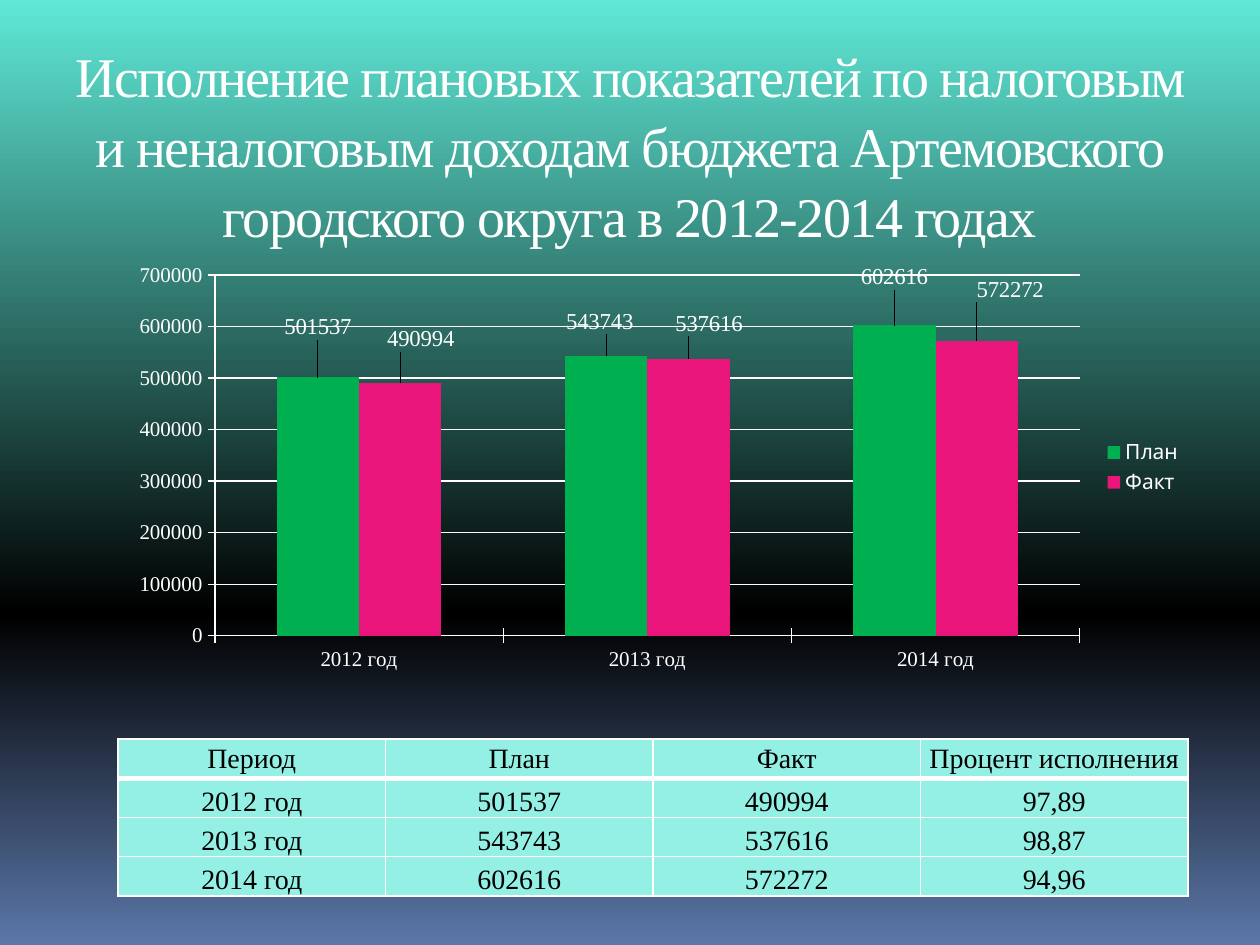
from typing import NamedTuple

from lxml.etree import SubElement
from pptx import Presentation
from pptx.chart.data import CategoryChartData
from pptx.dml.color import RGBColor
from pptx.enum.chart import XL_CHART_TYPE, XL_LABEL_POSITION, XL_LEGEND_POSITION, XL_TICK_MARK
from pptx.enum.text import MSO_ANCHOR, PP_ALIGN
from pptx.oxml import parse_xml
from pptx.oxml.ns import nsdecls, qn
from pptx.util import Emu, Pt

SERIF = "Times New Roman"
SANS = "Cabin"
WHITE = RGBColor(0xFF, 0xFF, 0xFF)
BLACK = RGBColor(0x00, 0x00, 0x00)
GREEN = RGBColor(0x00, 0xB0, 0x50)
PINK = RGBColor(0xEA, 0x15, 0x7A)
CELL = RGBColor(0x94, 0xF0, 0xE4)
TURQUOISE = RGBColor(0x5F, 0xE8, 0xD6)
STEEL = RGBColor(0x5B, 0x77, 0xA8)


def px(n: int) -> Emu:
    return Emu(round(n * 914400 / 126))


class Box(NamedTuple):
    x: int
    y: int
    w: int
    h: int

    def emu(self) -> list[Emu]:
        return [px(n) for n in self]


class Series(NamedTuple):
    name: str
    values: list[int]
    color: RGBColor
    label_shifts: list[tuple[int, int]]  # px from the place above the column


TITLE = ("Исполнение плановых показателей по налоговым и неналоговым доходам "
         "бюджета Артемовского городского округа в 2012-2014 годах")
TITLE_BOX = Box(63, 29, 1134, 168)
CHART_BOX = Box(118, 256, 1077, 423)
PLOT_BOX = Box(215, 275, 865, 361)
TABLE_BOX = Box(118, 739, 1070, 157)
YEARS = ["2012 год", "2013 год", "2014 год"]
PERCENTS = ["97,89", "98,87", "94,96"]
SERIES = [
    Series("План", [501537, 543743, 602616], GREEN, [(0, -32), (-7, -16), (0, -30)]),
    Series("Факт", [490994, 537616, 572272], PINK, [(21, -26), (20, -17), (33, -33)]),
]


def style_font(font, size: int, color: RGBColor, name: str = SERIF) -> None:
    font.size = Pt(size)
    font.name = name
    font.color.rgb = color


def paint_background(s) -> None:
    fill = s.background.fill
    fill.gradient()
    fill.gradient_angle = 270
    stops = s.element.find(".//" + qn("a:gsLst"))
    for stop in list(stops):
        stops.remove(stop)
    for percent, color in [(0, TURQUOISE), (65, BLACK), (100, STEEL)]:
        stop = SubElement(stops, qn("a:gs"), pos=str(percent * 1000))
        SubElement(stop, qn("a:srgbClr"), val=str(color))


def add_title(s) -> None:
    tf = s.shapes.add_textbox(*TITLE_BOX.emu()).text_frame
    tf.word_wrap = True
    tf.margin_left = tf.margin_right = tf.margin_bottom = 0
    tf.margin_top = px(10)
    tf.text = TITLE
    p = tf.paragraphs[0]
    p.alignment = PP_ALIGN.CENTER
    p.line_spacing = 1.04
    r = p.runs[0]
    style_font(r.font, 32, WHITE)
    r.font._element.set("spc", "-100")


def manual_layout(x: float, y: float, size: str = "", modes: str = ""):
    return parse_xml(
        f'<c:layout {nsdecls("c")}><c:manualLayout>{modes}'
        f'<c:x val="{x:.3f}"/><c:y val="{y:.3f}"/>{size}</c:manualLayout></c:layout>')


def add_column_chart(s) -> None:
    data = CategoryChartData()
    data.categories = YEARS
    for series in SERIES:
        data.add_series(series.name, series.values)
    chart = s.shapes.add_chart(XL_CHART_TYPE.COLUMN_CLUSTERED, *CHART_BOX.emu(), data).chart
    chart.has_title = False
    style_font(chart.font, 10, WHITE, SANS)

    # Legend
    chart.has_legend = True
    chart.legend.position = XL_LEGEND_POSITION.RIGHT
    chart.legend.include_in_layout = False
    style_font(chart.legend.font, 12, WHITE, SANS)

    # Axes
    for axis in (chart.category_axis, chart.value_axis):
        style_font(axis.tick_labels.font, 12, WHITE)
        axis.format.line.color.rgb = WHITE
        axis.format.line.width = Pt(0.75)
        axis.major_tick_mark = XL_TICK_MARK.CROSS
    value_axis = chart.value_axis
    value_axis.minimum_scale, value_axis.maximum_scale = 0, 700000
    value_axis.major_unit = 100000
    grid = value_axis.major_gridlines.format.line
    grid.color.rgb = WHITE
    grid.width = Pt(0.75)

    # Columns and their labels
    plot = chart.plots[0]
    plot.gap_width = 150
    plot.overlap = 0
    plot.vary_by_categories = False
    for series, columns in zip(SERIES, plot.series):
        columns.format.fill.solid()
        columns.format.fill.fore_color.rgb = series.color
        for i in range(len(YEARS)):
            label = columns.points[i].data_label
            style_font(label.font, 13, WHITE)
            label.position = XL_LABEL_POSITION.OUTSIDE_END
    shifts = [shift for series in SERIES for shift in series.label_shifts]
    for label, (dx, dy) in zip(chart.element.iter(qn("c:dLbl")), shifts):
        label.insert(1, manual_layout(dx / CHART_BOX.w, dy / CHART_BOX.h))

    # Plot area placement and clear chart background
    area = chart.element.find(".//" + qn("c:plotArea"))
    for old in area.findall(qn("c:layout")):
        area.remove(old)
    area.insert(0, manual_layout(
        (PLOT_BOX.x - CHART_BOX.x) / CHART_BOX.w, (PLOT_BOX.y - CHART_BOX.y) / CHART_BOX.h,
        f'<c:w val="{PLOT_BOX.w / CHART_BOX.w:.3f}"/><c:h val="{PLOT_BOX.h / CHART_BOX.h:.3f}"/>',
        '<c:layoutTarget val="inner"/><c:xMode val="edge"/><c:yMode val="edge"/>'))
    chart.element.find(qn("c:chart")).addnext(parse_xml(
        f'<c:spPr {nsdecls("c", "a")}><a:noFill/><a:ln><a:noFill/></a:ln></c:spPr>'))


def set_borders(cell, widths: dict[str, int]) -> None:
    tc_pr = cell._tc.get_or_add_tcPr()
    for i, (side, width) in enumerate(widths.items()):
        line = parse_xml(
            f'<a:{side} {nsdecls("a")} w="{Pt(width)}"><a:solidFill>'
            f'<a:srgbClr val="{WHITE}"/></a:solidFill></a:{side}>')
        tc_pr.insert(i, line)


def add_results_table(s) -> None:
    plan, fact = SERIES
    rows = [["Период", plan.name, fact.name, "Процент исполнения"]]
    rows += zip(YEARS, map(str, plan.values), map(str, fact.values), PERCENTS)
    table = s.shapes.add_table(len(rows), len(rows[0]), *TABLE_BOX.emu()).table
    for i, row in enumerate(rows):
        for j, text in enumerate(row):
            cell = table.cell(i, j)
            cell.text = text
            cell.margin_left = cell.margin_right = cell.margin_top = cell.margin_bottom = 0
            cell.vertical_anchor = MSO_ANCHOR.BOTTOM if i else MSO_ANCHOR.MIDDLE
            cell.fill.solid()
            cell.fill.fore_color.rgb = CELL
            p = cell.text_frame.paragraphs[0]
            p.alignment = PP_ALIGN.CENTER
            r = p.runs[0]
            style_font(r.font, 16, BLACK)
            r.font.bold = False
            set_borders(cell, {"lnL": 1, "lnR": 1, "lnT": 3 if i == 1 else 1,
                               "lnB": 1 if i else 3})


def main() -> None:
    prs = Presentation()
    prs.slide_width, prs.slide_height = px(1260), px(945)
    s = prs.slides.add_slide(prs.slide_layouts[6])
    paint_background(s)
    add_title(s)
    add_column_chart(s)
    add_results_table(s)
    prs.save("out.pptx")


if __name__ == "__main__":
    main()
